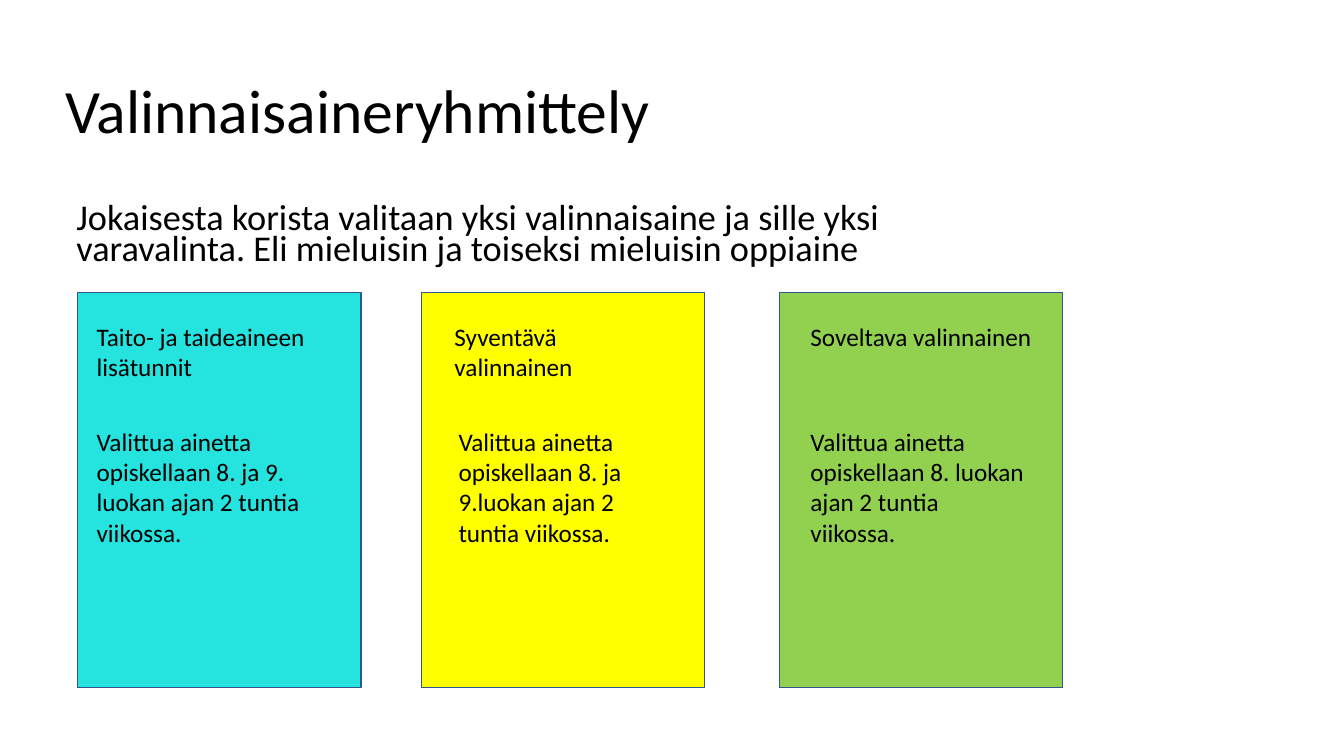
"""Build a slide that presents three groups of elective school subjects."""
from pptx import Presentation
from pptx.dml.color import RGBColor
from pptx.enum.shapes import MSO_SHAPE
from pptx.enum.text import MSO_ANCHOR
from pptx.util import Inches, Pt

RECTANGLE = MSO_SHAPE.RECTANGLE
TOP, MIDDLE = MSO_ANCHOR.TOP, MSO_ANCHOR.MIDDLE

BLACK = RGBColor(0x00, 0x00, 0x00)
OUTLINE = RGBColor(0x32, 0x54, 0x91)
TURQUOISE = RGBColor(0x25, 0xE3, 0xDE)
YELLOW = RGBColor(0xFF, 0xFF, 0x00)
GREEN = RGBColor(0x92, 0xD0, 0x50)

SLIDE_WIDTH, SLIDE_HEIGHT = Inches(13.33), Inches(7.5)
FONT = "Calibri"

BASKET_TOP, BASKET_WIDTH, BASKET_HEIGHT = 38.67, 21.08, 52.27
HEADING_TOP, HEADING_HEIGHT = 41.87, 9.47
DETAIL_TOP, DETAIL_HEIGHT = 55.73, 17.47

BASKETS = [
    (5.78, TURQUOISE,
     (6.45, 20.26, "Taito- ja taideaineen lisätunnit"),
     (6.45, 16.88, "Valittua ainetta opiskellaan 8. ja 9. luokan ajan 2 tuntia viikossa.")),
    (31.36, YELLOW,
     (33.08, 17.55, "Syventävä valinnainen"),
     (33.38, 15.15, "Valittua ainetta opiskellaan 8. ja 9.luokan ajan 2 tuntia viikossa.")),
    (57.99, GREEN,
     (59.56, 18.45, "Soveltava valinnainen"),
     (59.56, 17.4, "Valittua ainetta opiskellaan 8. luokan ajan 2 tuntia viikossa.")),
]


def area(left, top, width, height):
    """Turn percentages of the slide into lengths."""
    return (int(SLIDE_WIDTH * left / 100), int(SLIDE_HEIGHT * top / 100),
            int(SLIDE_WIDTH * width / 100), int(SLIDE_HEIGHT * height / 100))


def add_text(slide, place, text, size=18, spacing=1.0, before=0, anchor=TOP):
    """Add a wrapped text box with one paragraph."""
    frame = slide.shapes.add_textbox(*area(*place)).text_frame
    frame.word_wrap = True
    frame.vertical_anchor = anchor
    paragraph = frame.paragraphs[0]
    paragraph.text = text
    paragraph.line_spacing = spacing
    paragraph.space_before = Pt(before)
    paragraph.font.name = FONT
    paragraph.font.size = Pt(size)
    paragraph.font.color.rgb = BLACK


def add_basket(slide, left, fill, heading, detail):
    """Add a coloured basket with its heading and detail text."""
    shape = slide.shapes.add_shape(
        RECTANGLE, *area(left, BASKET_TOP, BASKET_WIDTH, BASKET_HEIGHT))
    shape.shadow.inherit = False
    shape.fill.solid()
    shape.fill.fore_color.rgb = fill
    shape.line.color.rgb = OUTLINE
    shape.line.width = Pt(1)
    rows = ((heading, HEADING_TOP, HEADING_HEIGHT), (detail, DETAIL_TOP, DETAIL_HEIGHT))
    for (text_left, width, text), top, height in rows:
        add_text(slide, (text_left, top, width, height), text)


def main():
    """Build and save the slide."""
    presentation = Presentation()
    presentation.slide_width = SLIDE_WIDTH
    presentation.slide_height = SLIDE_HEIGHT
    slide = presentation.slides.add_slide(presentation.slide_layouts[6])
    add_text(slide, (4.1, 5.33, 82.2, 19.33), "Valinnaisaineryhmittely",
             size=44, spacing=0.9, anchor=MIDDLE)
    add_text(slide, (4.95, 26.67, 71.12, 10.27),
             "Jokaisesta korista valitaan yksi valinnaisaine ja sille yksi "
             "varavalinta. Eli mieluisin ja toiseksi mieluisin oppiaine",
             size=25.9, spacing=0.7, before=10)
    for basket in BASKETS:
        add_basket(slide, *basket)
    presentation.save("out.pptx")


if __name__ == "__main__":
    main()
